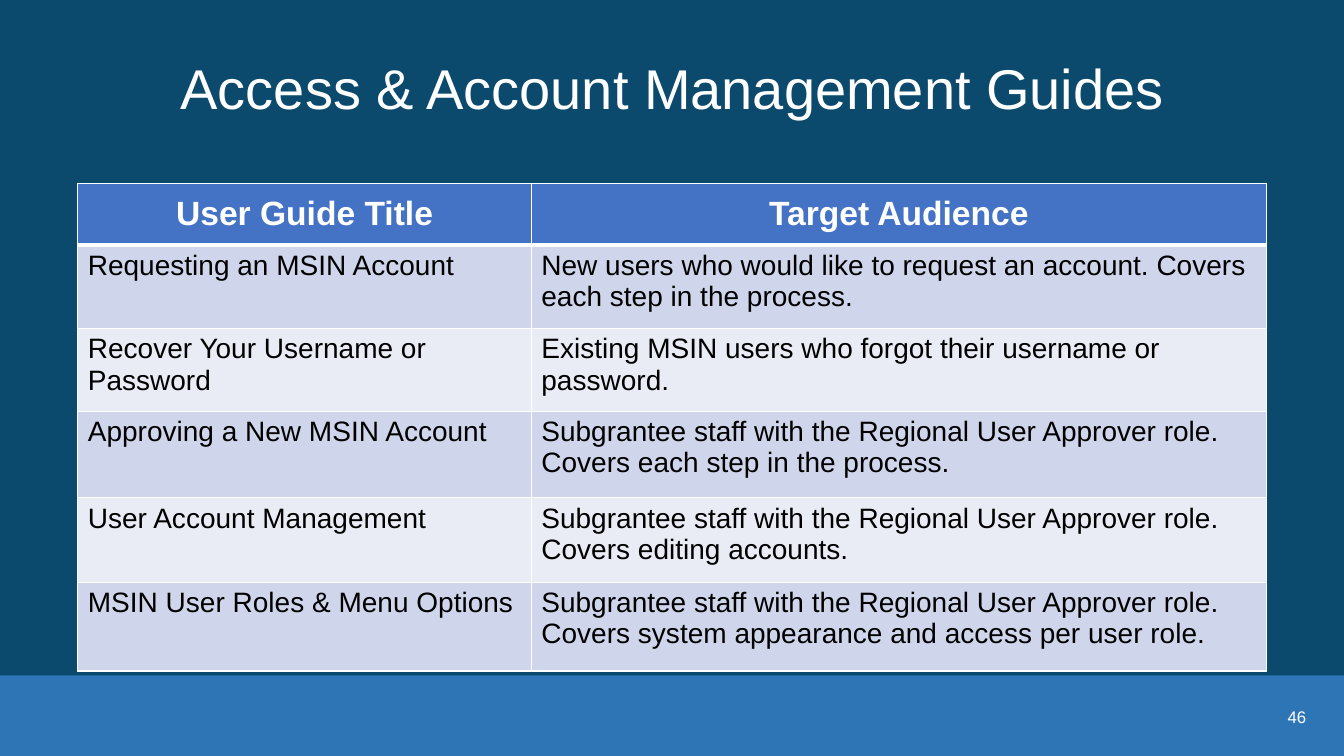
from lxml.etree import SubElement
from pptx import Presentation
from pptx.dml.color import RGBColor
from pptx.enum.shapes import MSO_SHAPE
from pptx.enum.text import MSO_ANCHOR, PP_ALIGN
from pptx.oxml.ns import qn
from pptx.util import Cm, Pt

TITLE = "Access & Account Management Guides"
NUMBER = "46"
GUIDES = [
    ("User Guide Title", "Target Audience"),
    ("Requesting an MSIN Account",
     "New users who would like to request an account. Covers each step in the process."),
    ("Recover Your Username or Password",
     "Existing MSIN users who forgot their username or password."),
    ("Approving a New MSIN Account",
     "Subgrantee staff with the Regional User Approver role. Covers each step in the process."),
    ("User Account Management",
     "Subgrantee staff with the Regional User Approver role. Covers editing accounts."),
    ("MSIN User Roles & Menu Options",
     "Subgrantee staff with the Regional User Approver role. "
     "Covers system appearance and access per user role."),
]
COLS = [11.43, 18.52]
ROWS = [1.55, 2.11, 2.08, 2.18, 2.13, 2.24]
WIDTH, HEIGHT, BAND = 33.87, 19.05, 2.03

THEME = {
    "font": "Arial",
    "back": "0C4A6D", "band": "2E75B6", "head": "4472C4",
    "odd": "CFD5EA", "even": "E9EBF5", "light": "FFFFFF", "dark": "000000",
    "title": 40, "label": 24, "body": 20, "number": 12,
    "thin": 1, "thick": 3,
}


def paint(fill, name):
    fill.solid()
    fill.fore_color.rgb = RGBColor.from_string(THEME[name])


def write(frame, text, size, color, align, bold=False, space=None):
    para = frame.paragraphs[0]
    para.text = text
    para.alignment = align
    para.line_spacing = space
    font = para.runs[0].font
    style = {"name": THEME["font"], "size": Pt(THEME[size]), "bold": bold}
    for key, value in style.items():
        setattr(font, key, value)
    font.color.rgb = RGBColor.from_string(THEME[color])


def label(slide, box, text, size, align, space=None):
    frame = slide.shapes.add_textbox(*map(Cm, box)).text_frame
    frame.word_wrap = True
    frame.vertical_anchor = MSO_ANCHOR.MIDDLE
    write(frame, text, size, "light", align, space=space)


def edge(cell, sides):
    props = cell._tc.get_or_add_tcPr()
    for spot, (side, width) in enumerate(sides.items()):
        line = SubElement(props, qn("a:ln" + side), w=str(Pt(THEME[width])))
        fill = SubElement(line, qn("a:solidFill"))
        SubElement(fill, qn("a:srgbClr"), val=THEME["light"])
        props.insert(spot, line)


def chart_guides(slide):
    table = slide.shapes.add_table(
        len(ROWS), len(COLS), Cm(1.96), Cm(4.62), Cm(sum(COLS)), Cm(sum(ROWS))
    ).table
    for col, width in zip(table.columns, COLS):
        col.width = Cm(width)
    for r, (row, height) in enumerate(zip(table.rows, ROWS)):
        row.height = Cm(height)
        head = r == 0
        tone = "head" if head else "odd" if r % 2 else "even"
        sides = {"L": "thin", "R": "thin",
                 "T": "thick" if r == 1 else "thin",
                 "B": "thick" if head else "thin"}
        for cell, text in zip(row.cells, GUIDES[r]):
            paint(cell.fill, tone)
            edge(cell, sides)
            if head:
                cell.vertical_anchor = MSO_ANCHOR.MIDDLE
                write(cell.text_frame, text, "label", "light", PP_ALIGN.CENTER, True)
            else:
                write(cell.text_frame, text, "body", "dark", PP_ALIGN.LEFT)


def main():
    deck = Presentation()
    deck.slide_width, deck.slide_height = Cm(WIDTH), Cm(HEIGHT)
    slide = deck.slides.add_slide(deck.slide_layouts[6])
    paint(slide.background.fill, "back")
    band = slide.shapes.add_shape(
        MSO_SHAPE.RECTANGLE, 0, Cm(HEIGHT - BAND), Cm(WIDTH), Cm(BAND))
    band.shadow.inherit = False
    paint(band.fill, "band")
    band.line.fill.background()
    label(slide, (31.98, 17.7, 1.19, 0.74), NUMBER, "number", PP_ALIGN.RIGHT)
    label(slide, (0, 0, WIDTH, 4.62), TITLE, "title", PP_ALIGN.CENTER, 0.9)
    chart_guides(slide)
    deck.save("out.pptx")


if __name__ == "__main__":
    main()
